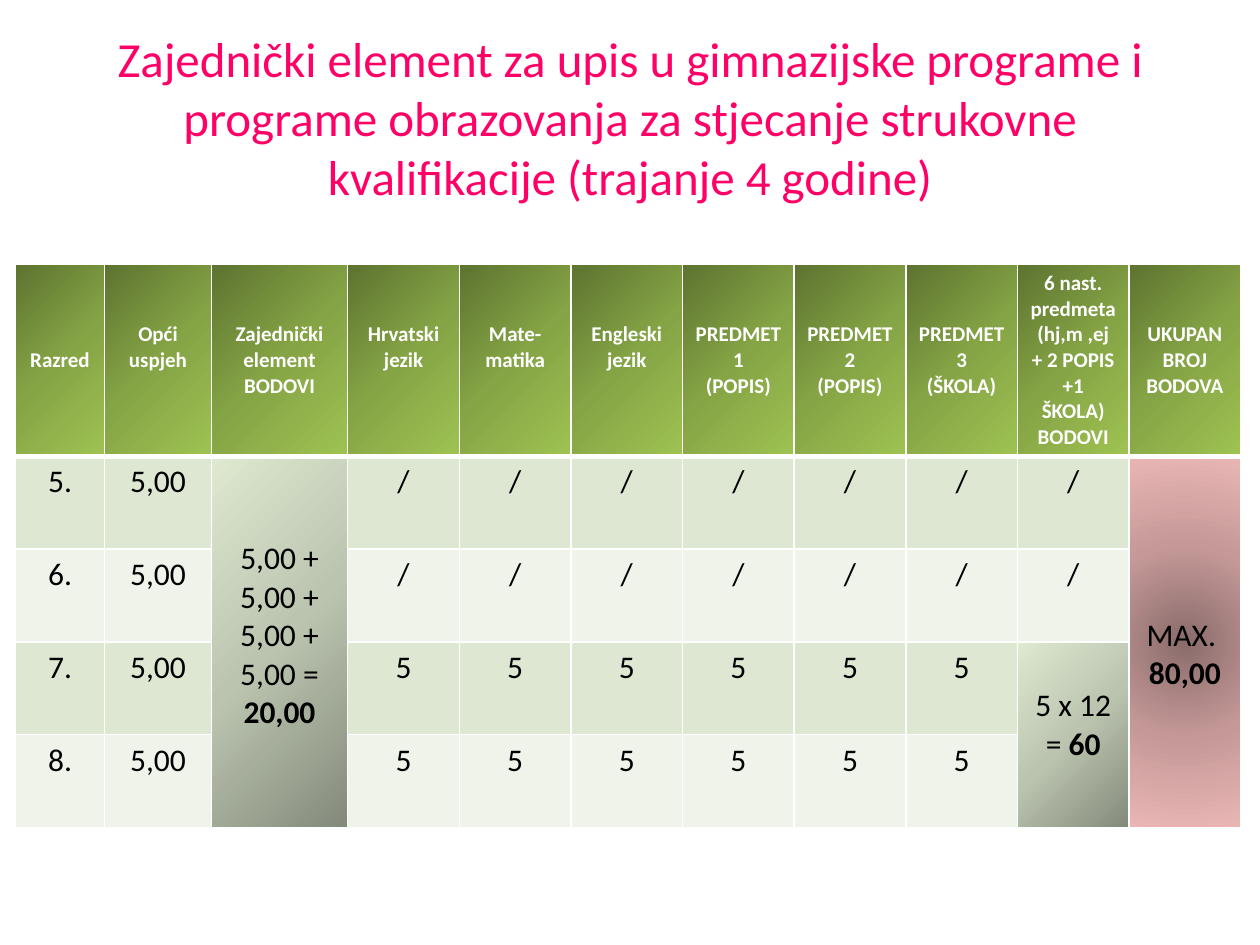
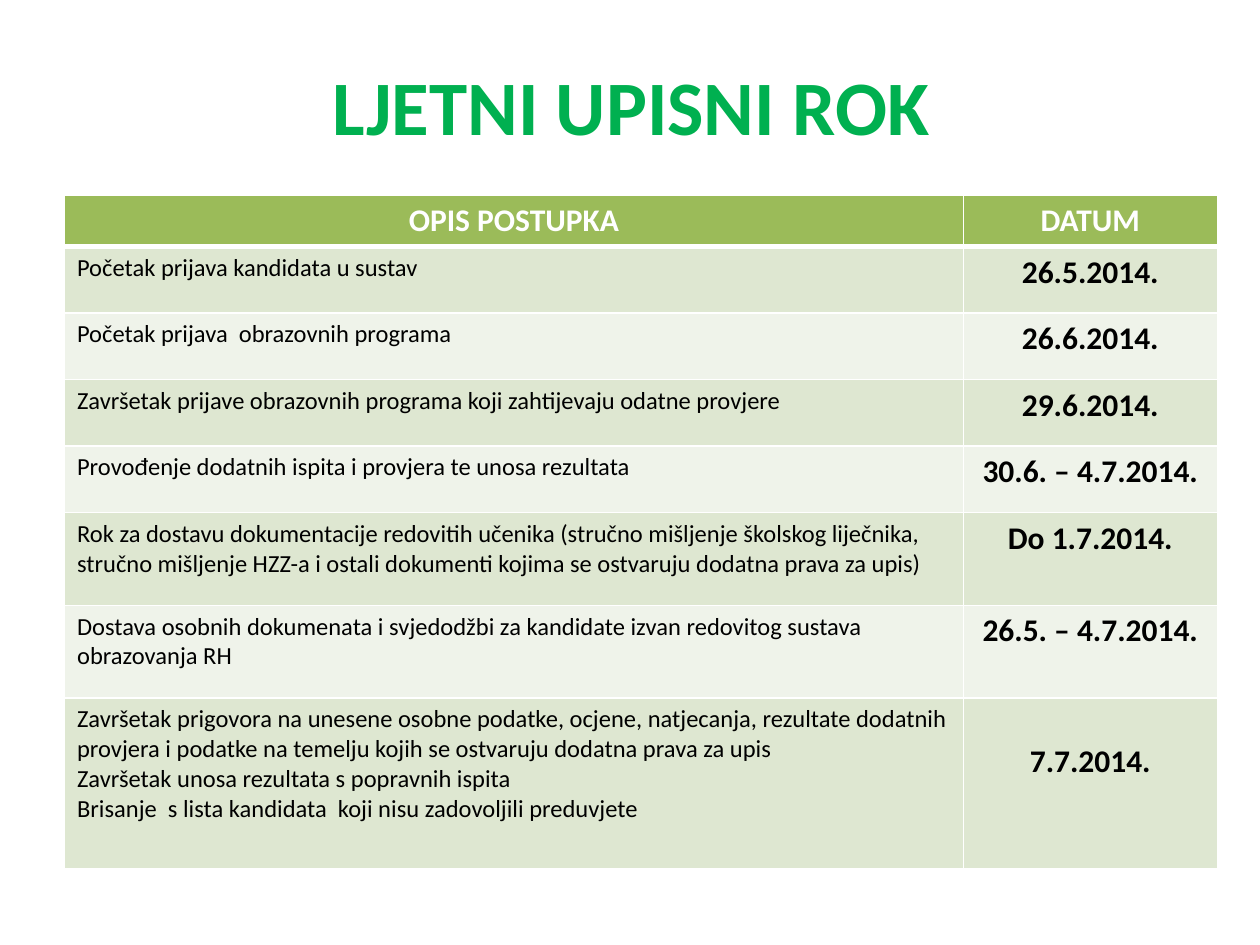
from lxml import etree
from pptx import Presentation
from pptx.dml.color import RGBColor
from pptx.enum.text import MSO_ANCHOR, MSO_AUTO_SIZE, PP_ALIGN
from pptx.oxml.ns import qn
from pptx.util import Cm, Pt

FONT = "Calibri"
WHITE = RGBColor(0xFF, 0xFF, 0xFF)
BLACK = RGBColor(0x00, 0x00, 0x00)
PINK = RGBColor(0xFF, 0x00, 0x66)
GREEN = RGBColor(0x00, 0xB0, 0x50)
HEADER_GREEN = RGBColor(0x9B, 0xBB, 0x59)
BANDS = (RGBColor(0xDE, 0xE7, 0xD1), RGBColor(0xEF, 0xF3, 0xEA))

HEADER_GRADIENT = {
    "colors": (RGBColor(0x5D, 0x73, 0x30), RGBColor(0x85, 0xA4, 0x45), RGBColor(0x9E, 0xC2, 0x52)),
    "angle": 45,
}
SUM_GRADIENT = {
    "colors": (RGBColor(0x84, 0x8A, 0x7B), RGBColor(0xBB, 0xC4, 0xAF), RGBColor(0xDE, 0xE9, 0xD0)),
    "focus": {"l": 100, "t": 100, "r": 0, "b": 0},
}
TOTAL_GRADIENT = {
    "colors": (RGBColor(0x8A, 0x6C, 0x6B), RGBColor(0xC5, 0x99, 0x98), RGBColor(0xE9, 0xB6, 0xB4)),
    "focus": {"l": 50, "t": 50, "r": 50, "b": 50},
}

POINTS_TITLE = ("Zajednički element za upis u gimnazijske programe i programe obrazovanja "
                "za stjecanje strukovne kvalifikacije (trajanje 4 godine)")
POINTS_HEADERS = [
    (3, ["Razred"]),
    (2, ["Opći uspjeh"]),
    (2, ["Zajednički element", "BODOVI"]),
    (2, ["Hrvatski jezik"]),
    (2, ["Mate-matika"]),
    (2, ["Engleski jezik"]),
    (2, ["PREDMET 1", "(POPIS)"]),
    (2, ["PREDMET 2", "(POPIS)"]),
    (2, ["PREDMET 3", "(ŠKOLA)"]),
    (0, ["6 nast. predmeta (hj,m ,ej", "+ 2 POPIS +1 ŠKOLA)", "BODOVI"]),
    (2, ["UKUPAN BROJ BODOVA"]),
]
GRADES = [("5.", "/"), ("6.", "/"), ("7.", "5"), ("8.", "5")]
SUBJECT_COLUMNS = range(3, 10)
MERGED = [
    {"first": (1, 2), "last": (4, 2), "skip": 2, "gradient": SUM_GRADIENT,
     "lines": ["5,00 + 5,00 +", "5,00 +", "5,00 =", "|20,00"]},
    {"first": (3, 9), "last": (4, 9), "skip": 1, "gradient": SUM_GRADIENT,
     "lines": ["5 x 12 = |60"]},
    {"first": (1, 10), "last": (4, 10), "skip": 4, "gradient": TOTAL_GRADIENT,
     "lines": ["MAX. ", "|80,00"]},
]
POINTS_COLUMNS = [1.8, 2.15, 2.75] + [2.25] * 8
POINTS_ROWS = [3.23] + [1.87] * 4

DATES_TITLE = "LJETNI UPISNI ROK"
DATES_HEADERS = ["OPIS POSTUPKA", "DATUM"]
DATES = [
    (["Početak prijava kandidata u sustav"], "26.5.2014."),
    (["Početak prijava  obrazovnih programa"], "26.6.2014."),
    (["Završetak prijave obrazovnih programa koji zahtijevaju odatne provjere"], "29.6.2014."),
    (["Provođenje dodatnih ispita i provjera te unosa rezultata"], "30.6. – 4.7.2014."),
    (["Rok za dostavu dokumentacije redovitih učenika (stručno mišljenje školskog liječnika, "
      "stručno mišljenje HZZ-a i ostali dokumenti kojima se ostvaruju dodatna prava za upis)"],
     "Do 1.7.2014."),
    (["Dostava osobnih dokumenata i svjedodžbi za kandidate izvan redovitog sustava "
      "obrazovanja RH"], "26.5. – 4.7.2014."),
    (["Završetak prigovora na unesene osobne podatke, ocjene, natjecanja, rezultate dodatnih "
      "provjera i podatke na temelju kojih se ostvaruju dodatna prava za upis",
      "Završetak unosa rezultata s popravnih ispita",
      "Brisanje  s lista kandidata  koji nisu zadovoljili preduvjete"], "7.7.2014."),
]
DATES_COLUMNS = [18.12, 5.12]
DATES_ROWS = [0.99] + [1.34] * 4 + [1.87] * 2 + [3.43]

CELL_MARGIN = Cm(0.13)
LINE_HEIGHT = 1.22


def write_text(frame, lines, size=18, color=BLACK, bold=False, align=PP_ALIGN.CENTER):
    for index, line in enumerate(lines):
        paragraph = frame.paragraphs[0] if index == 0 else frame.add_paragraph()
        paragraph.alignment = align
        plain, _, strong = line.partition("|")
        for text, is_bold in ((plain, bold), (strong, True)):
            if text:
                run = paragraph.add_run()
                run.text = text
                run.font.name = FONT
                run.font.size = Pt(size)
                run.font.bold = is_bold
                run.font.color.rgb = color


def fill_cell(cell, lines, skip=0, size=18, **text_format):
    cell.margin_top = CELL_MARGIN + int(Pt(size) * LINE_HEIGHT * skip)
    write_text(cell.text_frame, lines, size=size, **text_format)


def add_solid(parent, color):
    fill = etree.SubElement(parent, qn("a:solidFill"))
    etree.SubElement(fill, qn("a:srgbClr"), val=str(color))


def set_gradient(cell, colors, angle=None, focus=None):
    properties = cell._tc.get_or_add_tcPr()
    for solid in properties.findall(qn("a:solidFill")):
        properties.remove(solid)
    gradient = etree.SubElement(properties, qn("a:gradFill"), rotWithShape="1")
    stops = etree.SubElement(gradient, qn("a:gsLst"))
    for index, color in enumerate(colors):
        stop = etree.SubElement(stops, qn("a:gs"), pos=str(index * 50000))
        etree.SubElement(stop, qn("a:srgbClr"), val=str(color))
    if focus:
        circle = etree.SubElement(gradient, qn("a:path"), path="circle")
        sides = {side: str(value * 1000) for side, value in focus.items()}
        etree.SubElement(circle, qn("a:fillToRect"), **sides)
    else:
        etree.SubElement(gradient, qn("a:lin"), ang=str(angle * 60000), scaled="0")


def set_borders(cell, row):
    properties = cell._tc.get_or_add_tcPr()
    widths = {"L": 1, "R": 1, "T": 3 if row == 1 else 1, "B": 3 if row == 0 else 1}
    for side, width in widths.items():
        line = etree.SubElement(properties, qn(f"a:ln{side}"), w=str(Pt(width)))
        add_solid(line, WHITE)


def add_title_slide(presentation, title, left, top, **text_format):
    slide = presentation.slides.add_slide(presentation.slide_layouts[5])
    shape = slide.shapes.title
    shape.left, shape.top, shape.width, shape.height = Cm(left), Cm(top), Cm(22.86), Cm(3.18)
    shape.text_frame.auto_size = MSO_AUTO_SIZE.NONE
    shape.text_frame.vertical_anchor = MSO_ANCHOR.MIDDLE
    write_text(shape.text_frame, [title], **text_format)
    return slide


def add_banded_table(slide, left, top, widths, heights):
    frame = slide.shapes.add_table(len(heights), len(widths), Cm(left), Cm(top),
                                   Cm(sum(widths)), Cm(sum(heights)))
    table = frame.table
    table.first_row = table.horz_banding = False
    for column, width in zip(table.columns, widths):
        column.width = Cm(width)
    for index, (row, height) in enumerate(zip(table.rows, heights)):
        row.height = Cm(height)
        for cell in row.cells:
            set_borders(cell, index)
            cell.fill.solid()
            cell.fill.fore_color.rgb = BANDS[(index - 1) % 2] if index else HEADER_GREEN
    return table


def build_points_slide(presentation):
    slide = add_title_slide(presentation, POINTS_TITLE, 1.27, 0.76, size=28, color=PINK)
    table = add_banded_table(slide, 0.31, 5.33, POINTS_COLUMNS, POINTS_ROWS)
    for column, (skip, lines) in enumerate(POINTS_HEADERS):
        cell = table.cell(0, column)
        set_gradient(cell, **HEADER_GRADIENT)
        fill_cell(cell, lines, skip=skip, size=12, color=WHITE, bold=True)
    for block in MERGED:
        cell = table.cell(*block["first"])
        cell.merge(table.cell(*block["last"]))
        set_gradient(cell, **block["gradient"])
        fill_cell(cell, block["lines"], skip=block["skip"])
    for row, (grade, mark) in enumerate(GRADES, start=1):
        fill_cell(table.cell(row, 0), [grade])
        fill_cell(table.cell(row, 1), ["5,00"])
        for column in SUBJECT_COLUMNS:
            cell = table.cell(row, column)
            if not (cell.is_merge_origin or cell.is_spanned):
                fill_cell(cell, [mark])


def build_dates_slide(presentation):
    slide = add_title_slide(presentation, DATES_TITLE, 1.3, 0.53, size=44, color=GREEN, bold=True)
    table = add_banded_table(slide, 1.3, 3.94, DATES_COLUMNS, DATES_ROWS)
    for column, header in enumerate(DATES_HEADERS):
        fill_cell(table.cell(0, column), [header], color=WHITE, bold=True)
    for row, (lines, date) in enumerate(DATES, start=1):
        fill_cell(table.cell(row, 0), lines, size=14, align=PP_ALIGN.LEFT)
        fill_cell(table.cell(row, 1), [date], skip=int(row == len(DATES)), bold=True)


def main():
    presentation = Presentation()
    presentation.slide_width, presentation.slide_height = Cm(25.4), Cm(19.05)
    build_points_slide(presentation)
    build_dates_slide(presentation)
    presentation.save("out.pptx")


if __name__ == "__main__":
    main()
